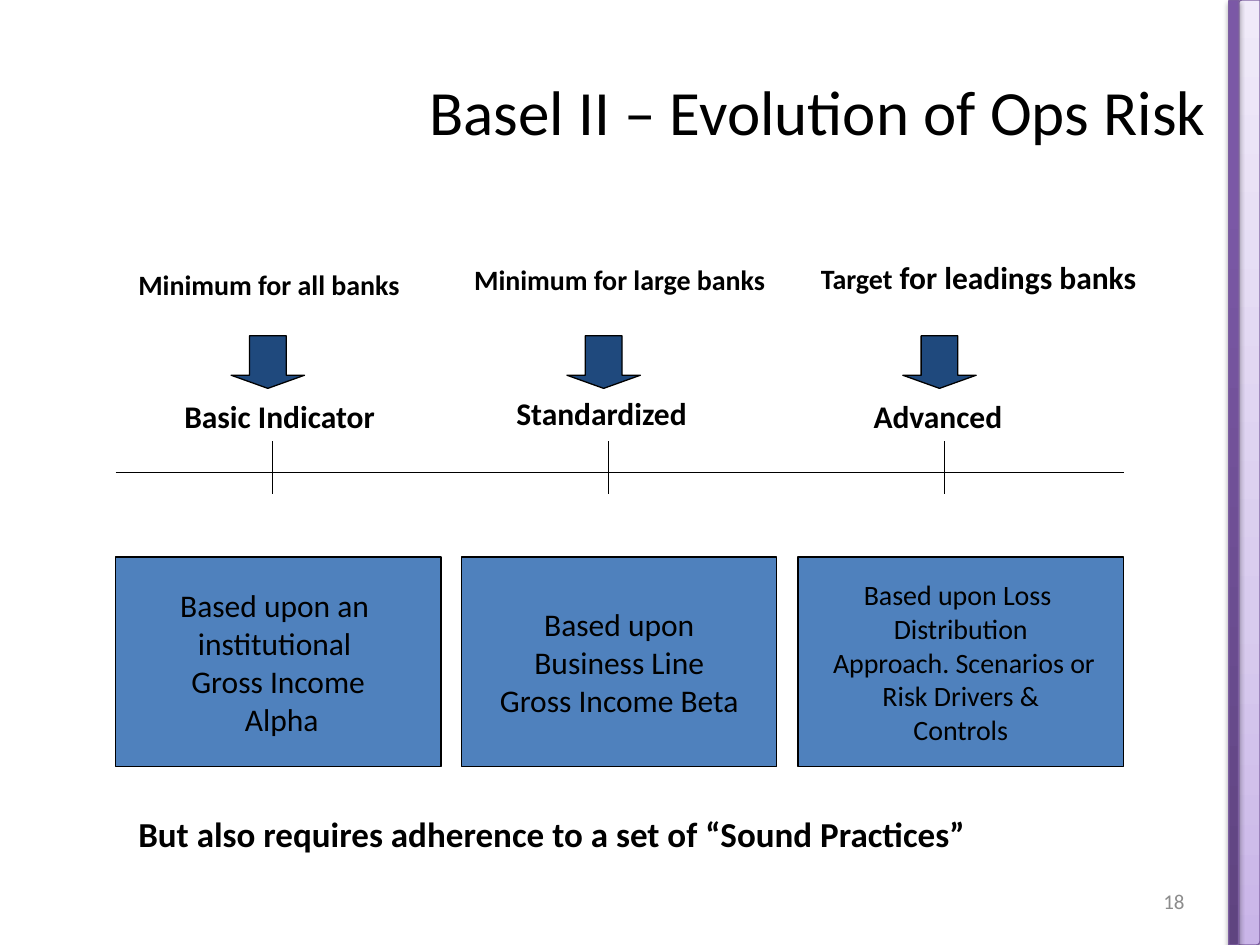
from lxml import etree
from pptx import Presentation
from pptx.dml.color import RGBColor
from pptx.enum.shapes import MSO_CONNECTOR, MSO_SHAPE
from pptx.enum.text import MSO_ANCHOR, MSO_AUTO_SIZE, PP_ALIGN
from pptx.oxml.ns import qn
from pptx.util import Cm, Pt

RECTANGLE = MSO_SHAPE.RECTANGLE
DOWN_ARROW = MSO_SHAPE.DOWN_ARROW
ROUNDED_DIAGONAL = MSO_SHAPE.ROUND_2_DIAG_RECTANGLE
STRAIGHT = MSO_CONNECTOR.STRAIGHT
LEFT, CENTER, RIGHT = PP_ALIGN.LEFT, PP_ALIGN.CENTER, PP_ALIGN.RIGHT
TOP, MIDDLE = MSO_ANCHOR.TOP, MSO_ANCHOR.MIDDLE
FIT_SHAPE = MSO_AUTO_SIZE.SHAPE_TO_FIT_TEXT
NO_FIT = MSO_AUTO_SIZE.NONE

COLUMN_PITCH = 6.77
AXIS_LEFT, AXIS_RIGHT, AXIS_TOP = 2.33, 22.65, 9.53


def color(value):
    return RGBColor.from_string(value)


class SlideBuilder:
    font_name = "Calibri"
    ink = "000000"
    box_fill = "4F81BD"
    arrow_fill = "1F497D"
    band_line = "7D60A0"
    line_width = Pt(0.75)

    def __init__(self, slide):
        self.slide = slide

    def shape(self, kind, left, top, width, height, line):
        shape = self.slide.shapes.add_shape(
            kind, Cm(left), Cm(top), Cm(width), Cm(height))
        shape.shadow.inherit = False
        shape.line.color.rgb = color(line)
        shape.line.width = self.line_width
        return shape

    def solid(self, kind, left, top, width, height, fill):
        shape = self.shape(kind, left, top, width, height, self.ink)
        shape.fill.solid()
        shape.fill.fore_color.rgb = color(fill)
        return shape

    def fill_frame(self, frame, lines, size, align, bold=False):
        for index, line in enumerate(lines):
            paragraph = frame.add_paragraph() if index else frame.paragraphs[0]
            paragraph.text = line
            paragraph.alignment = align
            font = paragraph.font
            font.name, font.size, font.bold = self.font_name, Pt(size), bold
            font.color.rgb = color(self.ink)

    def text(self, left, top, width, height, text, size, align=LEFT,
             bold=True, anchor=TOP, wrap=False):
        shape = self.slide.shapes.add_textbox(
            Cm(left), Cm(top), Cm(width), Cm(height))
        frame = shape.text_frame
        frame.word_wrap = wrap
        frame.auto_size = FIT_SHAPE if anchor == TOP else NO_FIT
        frame.vertical_anchor = anchor
        self.fill_frame(frame, [text], size, align, bold)
        return frame.paragraphs[0]

    def box(self, left, width, lines, size):
        shape = self.solid(RECTANGLE, left, 11.23, width, 4.23, self.box_fill)
        frame = shape.text_frame
        frame.word_wrap = False
        frame.vertical_anchor = MIDDLE
        self.fill_frame(frame, lines, size, CENTER)

    def arrow(self, left):
        shape = self.solid(DOWN_ARROW, left, 6.77, 1.48, 1.06, self.arrow_fill)
        shape.adjustments[0] = 0.5
        shape.adjustments[1] = 0.25

    def line(self, left, top, right, bottom):
        connector = self.slide.shapes.add_connector(
            STRAIGHT, Cm(left), Cm(top), Cm(right), Cm(bottom))
        connector.line.color.rgb = color(self.ink)
        connector.line.width = self.line_width
        etree.SubElement(connector._element.spPr, qn("a:effectLst"))

    def band(self, left, width, stops, shadow_alpha, shadow_distance):
        shape = self.shape(ROUNDED_DIAGONAL, left, 0, width, 19.05, self.band_line)
        shape.fill.gradient()
        shape.fill.gradient_angle = 90
        properties = shape._element.spPr
        stop_list = properties.find(qn("a:gradFill")).find(qn("a:gsLst"))
        for stop in list(stop_list):
            stop_list.remove(stop)
        for position, value in stops:
            stop = etree.SubElement(stop_list, qn("a:gs"), pos=str(position * 1000))
            etree.SubElement(stop, qn("a:srgbClr"), val=value)
        shadow = etree.SubElement(
            properties.find(qn("a:effectLst")), qn("a:outerShdw"),
            blurRad=str(Pt(3.1)), dist=str(Pt(shadow_distance)),
            dir="5400000", rotWithShape="0")
        shade = etree.SubElement(shadow, qn("a:srgbClr"), val=self.ink)
        etree.SubElement(shade, qn("a:alpha"), val=str(shadow_alpha * 1000))


def main():
    presentation = Presentation()
    presentation.slide_width = Cm(25.4)
    presentation.slide_height = Cm(19.05)
    builder = SlideBuilder(
        presentation.slides.add_slide(presentation.slide_layouts[6]))

    builder.band(24.97, 0.43, [(0, "C9B5E8"), (35, "D8CBEE"), (100, "F0EAF9")], 38, 1.6)
    builder.band(24.77, 0.2, [(0, "5F4480"), (80, "7B58A6"), (100, "7C57A8")], 35, 1.8)

    builder.text(4.88, 1.27, 19.68, 1.9, "Basel II – Evolution of Ops Risk", 36,
                 RIGHT, bold=False, anchor=MIDDLE, wrap=True)
    number = builder.text(18.21, 17.65, 5.92, 1.02, "18", 12,
                          RIGHT, bold=False, anchor=MIDDLE, wrap=True)
    number.font.color.rgb = color("8C8C8C")

    boxes = [
        (AXIS_LEFT, 6.56, 18,
         ["Based upon an ", "institutional ", "Gross Income", " Alpha"]),
        (9.31, 6.35, 18,
         ["Based upon", "Business Line", "Gross Income Beta"]),
        (16.09, 6.56, 16,
         ["Based upon Loss ", "Distribution", " Approach. Scenarios or",
          " Risk Drivers & ", "Controls"]),
    ]
    for left, width, size, lines in boxes:
        builder.box(left, width, lines, size)

    builder.line(AXIS_LEFT, AXIS_TOP, AXIS_RIGHT, AXIS_TOP)
    for column in range(3):
        offset = column * COLUMN_PITCH
        builder.line(5.5 + offset, 8.89, 5.5 + offset, 9.95)
        builder.arrow(4.66 + offset)

    builder.text(2.96, 7.87, 5.5, 1.02, "Basic Indicator ", 18, CENTER, wrap=True)
    builder.text(10.16, 7.82, 4.5, 1.02, "Standardized", 18)
    builder.text(17.36, 7.87, 3.56, 1.02, "Advanced", 18)

    builder.text(2.54, 5.26, 6.48, 0.94, "Minimum for all banks", 16)
    builder.text(9.31, 5.16, 7.21, 0.94, "Minimum for large banks", 16)
    target = builder.text(16.3, 5.08, 6.93, 1.02, "Target", 16)
    ending = target.add_run()
    ending.text = " for leadings banks"
    ending.font.size = Pt(18)

    builder.text(2.54, 16.26, 19.94, 1.09,
                 "But also requires adherence to a set of “Sound Practices”", 20)

    presentation.save("out.pptx")


if __name__ == "__main__":
    main()
